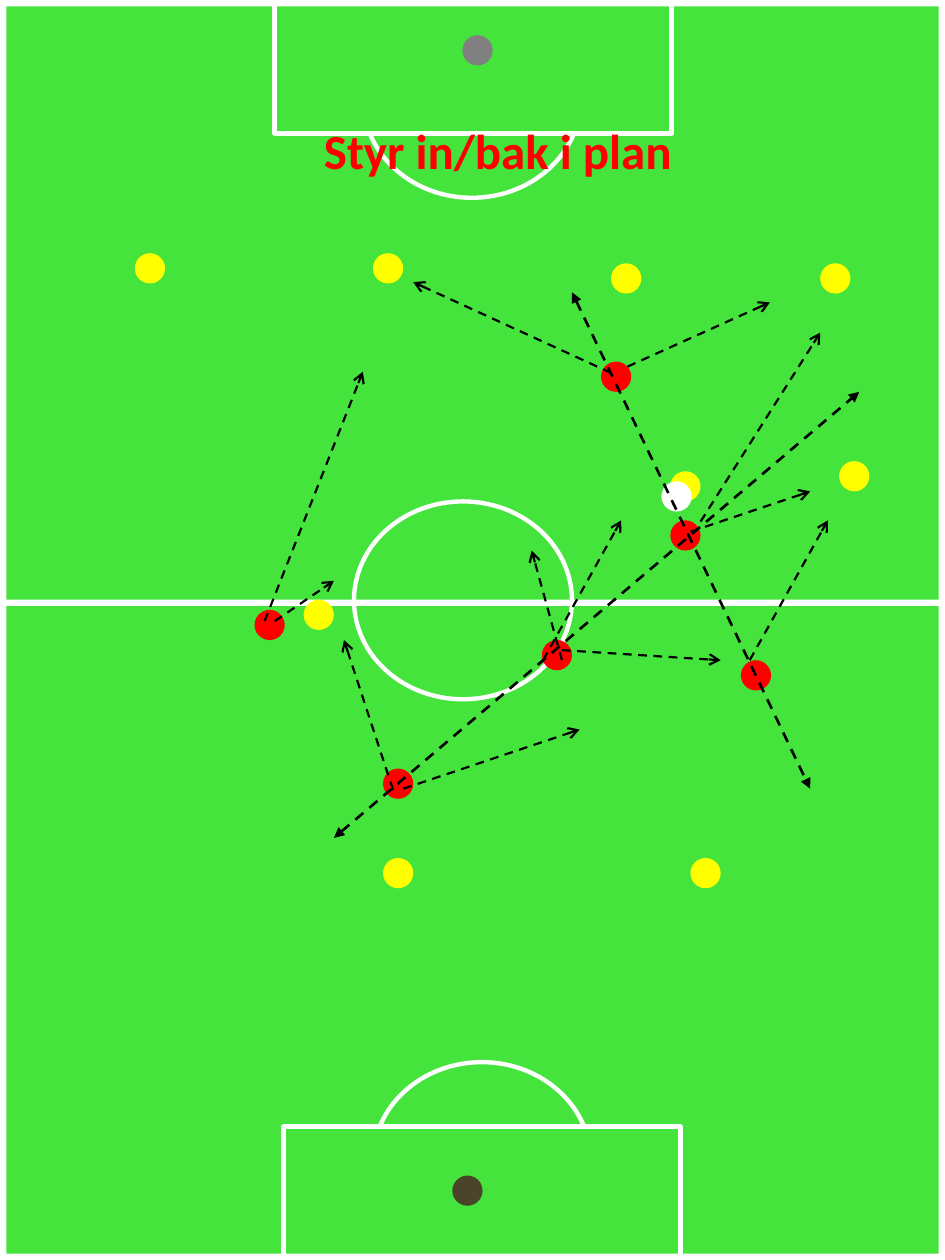
from lxml import etree
from pptx import Presentation
from pptx.dml.color import RGBColor
from pptx.enum.dml import MSO_LINE
from pptx.enum.shapes import MSO_CONNECTOR, MSO_SHAPE
from pptx.enum.text import MSO_AUTO_SIZE, PP_ALIGN
from pptx.oxml.ns import qn
from pptx.util import Inches, Pt

RECT, OVAL = MSO_SHAPE.RECTANGLE, MSO_SHAPE.OVAL
STRAIGHT, DASH = MSO_CONNECTOR.STRAIGHT, MSO_LINE.DASH
CENTER, GROW = PP_ALIGN.CENTER, MSO_AUTO_SIZE.SHAPE_TO_FIT_TEXT

GRASS = RGBColor(0x44, 0xE4, 0x3C)
WHITE = RGBColor(0xFF, 0xFF, 0xFF)
BLACK = RGBColor(0x00, 0x00, 0x00)
YELLOW = RGBColor(0xFF, 0xFF, 0x00)
RED = RGBColor(0xFF, 0x00, 0x00)
BROWN = RGBColor(0x4A, 0x45, 0x2A)
GRAY = RGBColor(0x80, 0x80, 0x80)

WIDE, HIGH = 7.5, 10
EDGE, DOT = 0.05, 0.24
RING = (1.73, 1.57)
BOX = (3.15, 1.06)

TITLE = "Styr in/bak i plan"
RINGS = [(2.81, 3.98), (2.88, 0), (2.96, HIGH - RING[1])]
BOXES = [(2.25, HIGH - BOX[1]), (2.18, 0)]
BARS = [
    (0, 0, EDGE, HIGH),
    (WIDE - EDGE, 0, EDGE, HIGH),
    (0, 0, WIDE, EDGE),
    (0, 4.76, WIDE, EDGE),
    (0, HIGH - EDGE, WIDE, EDGE),
]
TEAMS = [
    (YELLOW, [(1.07, 2.01), (2.96, 2.01), (4.85, 2.09), (6.51, 2.09), (5.32, 3.74),
              (6.66, 3.66), (2.41, 4.76), (3.04, 6.81), (5.48, 6.81)]),
    (RED, [(4.77, 2.87), (5.32, 4.13), (2.02, 4.84), (4.3, 5.08), (5.88, 5.24), (3.04, 6.1)]),
    (BROWN, [(3.59, 9.33)]),
    (GRAY, [(3.67, 0.28)]),
    (WHITE, [(5.25, 3.82)]),
]
AXES = [(4.54, 2.32, 6.43, 6.26), (2.65, 6.65, 6.82, 3.11)]
RUNS = [
    (4.31, 5.24, 4.93, 4.13),
    (2.18, 4.93, 2.65, 4.61),
    (2.1, 4.93, 2.88, 2.95),
    (3.12, 6.27, 2.73, 5.08),
    (5.56, 4.14, 6.51, 2.64),
    (4.46, 5.24, 4.22, 4.37),
    (5.95, 5.24, 6.57, 4.13),
    (4.98, 2.91, 6.11, 2.4),
    (5.48, 4.22, 6.43, 3.9),
    (4.85, 2.96, 3.28, 2.24),
    (3.2, 6.26, 4.6, 5.79),
    (4.46, 5.16, 5.72, 5.24),
]


def draw(slide, kind, place, fill=None, line=None):
    shape = slide.shapes.add_shape(kind, *map(Inches, place))
    shape.shadow.inherit = False
    if fill is None:
        shape.fill.background()
    else:
        shape.fill.solid()
        shape.fill.fore_color.rgb = fill
    if line is None:
        shape.line.fill.background()
    else:
        shape.line.color.rgb = line
        shape.line.width = Pt(2.5)


def arrow(slide, ends, width, tips):
    link = slide.shapes.add_connector(STRAIGHT, *map(Inches, ends))
    link.line.color.rgb = BLACK
    link.line.width = Pt(width)
    link.line.dash_style = DASH
    props = link._element.spPr
    for tag, tip in tips.items():
        etree.SubElement(props.find(qn("a:ln")), qn(tag), type=tip)
    etree.SubElement(props, qn("a:effectLst"))


def main():
    deck = Presentation()
    deck.slide_width, deck.slide_height = Inches(WIDE), Inches(HIGH)
    slide = deck.slides.add_slide(deck.slide_layouts[6])
    slide.background.fill.solid()
    slide.background.fill.fore_color.rgb = GRASS

    for spot in RINGS:
        draw(slide, OVAL, spot + RING, line=WHITE)
    for spot in BOXES:
        draw(slide, RECT, spot + BOX, GRASS, WHITE)
    for bar in BARS:
        draw(slide, RECT, bar, WHITE)
    for color, spots in TEAMS:
        for spot in spots:
            draw(slide, OVAL, spot + (DOT, DOT), color)
    for ends in AXES:
        arrow(slide, ends, 1.5, {"a:headEnd": "triangle", "a:tailEnd": "triangle"})
    for ends in RUNS:
        arrow(slide, ends, 1.25, {"a:tailEnd": "arrow"})

    frame = slide.shapes.add_textbox(*map(Inches, (1.94, 0.91, 4.02, 0.57))).text_frame
    frame.word_wrap = True
    frame.auto_size = GROW
    head = frame.paragraphs[0]
    head.text = TITLE
    head.alignment = CENTER
    head.font.name = "Calibri"
    head.font.size = Pt(28)
    head.font.bold = True
    head.font.color.rgb = RED
    deck.save("out.pptx")


if __name__ == "__main__":
    main()
